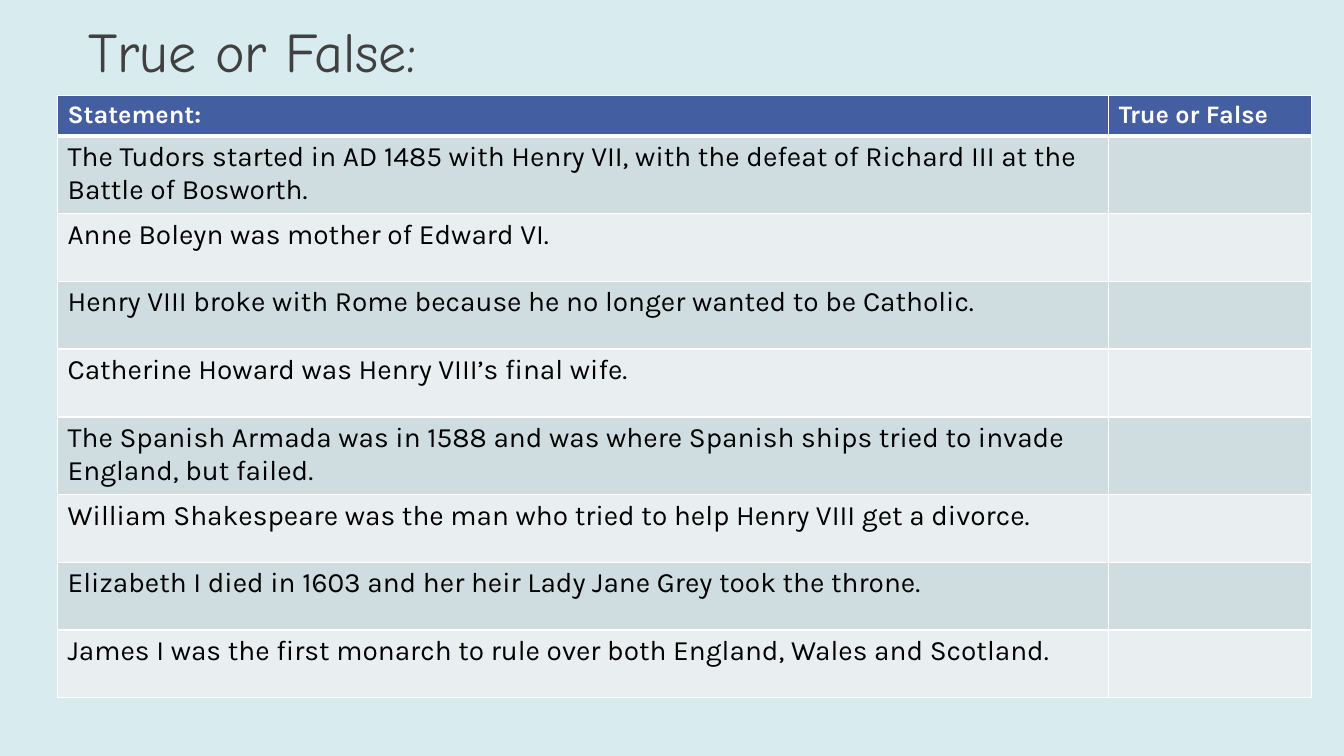
from lxml import etree
from pptx import Presentation
from pptx.dml.color import RGBColor
from pptx.enum.text import MSO_ANCHOR
from pptx.oxml.ns import qn
from pptx.util import Cm, Pt

MIDDLE = MSO_ANCHOR.MIDDLE
BACKGROUND = RGBColor(0xD8, 0xEB, 0xEE)
TITLE_GREY = RGBColor(0x40, 0x40, 0x40)
HEADER_BLUE = RGBColor(0x44, 0x5E, 0xA2)
BAND_DARK = RGBColor(0xCF, 0xDD, 0xE0)
BAND_LIGHT = RGBColor(0xE9, 0xEF, 0xF0)
WHITE = RGBColor(0xFF, 0xFF, 0xFF)
BLACK = RGBColor(0x00, 0x00, 0x00)

STATEMENTS = [
    "The Tudors started in AD 1485 with Henry VII, with the defeat of Richard III at the Battle of Bosworth.",
    "Anne Boleyn was mother of Edward VI.",
    "Henry VIII broke with Rome because he no longer wanted to be Catholic.",
    "Catherine Howard was Henry VIII’s final wife.",
    "The Spanish Armada was in 1588 and was where Spanish ships tried to invade England, but failed.",
    "William Shakespeare was the man who tried to help Henry VIII get a divorce.",
    "Elizabeth I died in 1603 and her heir Lady Jane Grey took the throne.",
    "James I was the first monarch to rule over both England, Wales and Scotland.",
]
ROWS = [("Statement:", "True or False")] + [(text, "") for text in STATEMENTS]
HEIGHTS = [0.89, 1.52] + [1.71] * 7
WIDTHS = [26.49, 5.11]


def write(tf, text, font="Karla", size=20, color=BLACK, bold=False):
    p = tf.paragraphs[0]
    r = p.add_run()
    r.text = text
    r.font.name = font
    r.font.size = Pt(size)
    r.font.bold = bold
    r.font.color.rgb = color
    return p


prs = Presentation()
prs.slide_width = Cm(33.87)
prs.slide_height = Cm(19.05)
s = prs.slides.add_slide(prs.slide_layouts[6])
s.background.fill.solid()
s.background.fill.fore_color.rgb = BACKGROUND

sp = s.shapes.add_textbox(Cm(1.98), Cm(0.43), Cm(26.54), Cm(1.9))
tf = sp.text_frame
tf.word_wrap = True
tf.vertical_anchor = MIDDLE
p = write(tf, "True or False:", font="Comic Neue", size=40, color=TITLE_GREY)
p.line_spacing = 0.9

table = s.shapes.add_table(len(ROWS), len(WIDTHS), Cm(1.45), Cm(2.41),
                           Cm(sum(WIDTHS)), Cm(sum(HEIGHTS))).table
for column, width in zip(table.columns, WIDTHS):
    column.width = Cm(width)

for i, (texts, height) in enumerate(zip(ROWS, HEIGHTS)):
    table.rows[i].height = Cm(height)
    header = i == 0
    band = HEADER_BLUE if header else (BAND_LIGHT, BAND_DARK)[i % 2]
    for j, text in enumerate(texts):
        cell = table.cell(i, j)
        for side in ("lnL", "lnR", "lnT", "lnB"):
            thick = (header and side == "lnB") or (i == 1 and side == "lnT")
            ln = etree.SubElement(cell._tc.get_or_add_tcPr(), qn(f"a:{side}"),
                                  w=str(Pt(3 if thick else 1)))
            fill = etree.SubElement(ln, qn("a:solidFill"))
            etree.SubElement(fill, qn("a:srgbClr"), val=str(WHITE))
        cell.fill.solid()
        cell.fill.fore_color.rgb = band
        if text:
            write(cell.text_frame, text, size=18 if header else 20,
                  color=WHITE if header else BLACK, bold=header)

prs.save("out.pptx")
